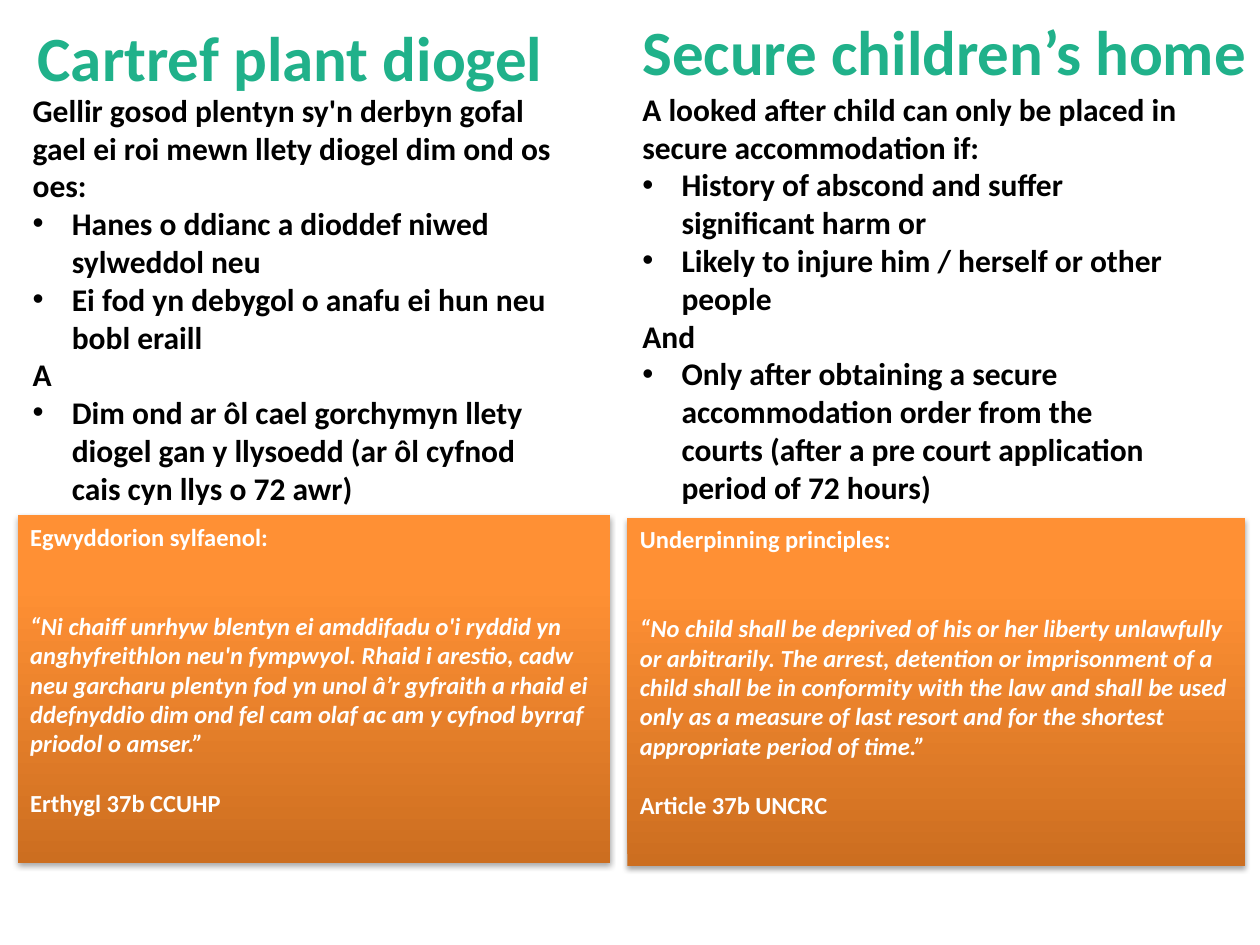
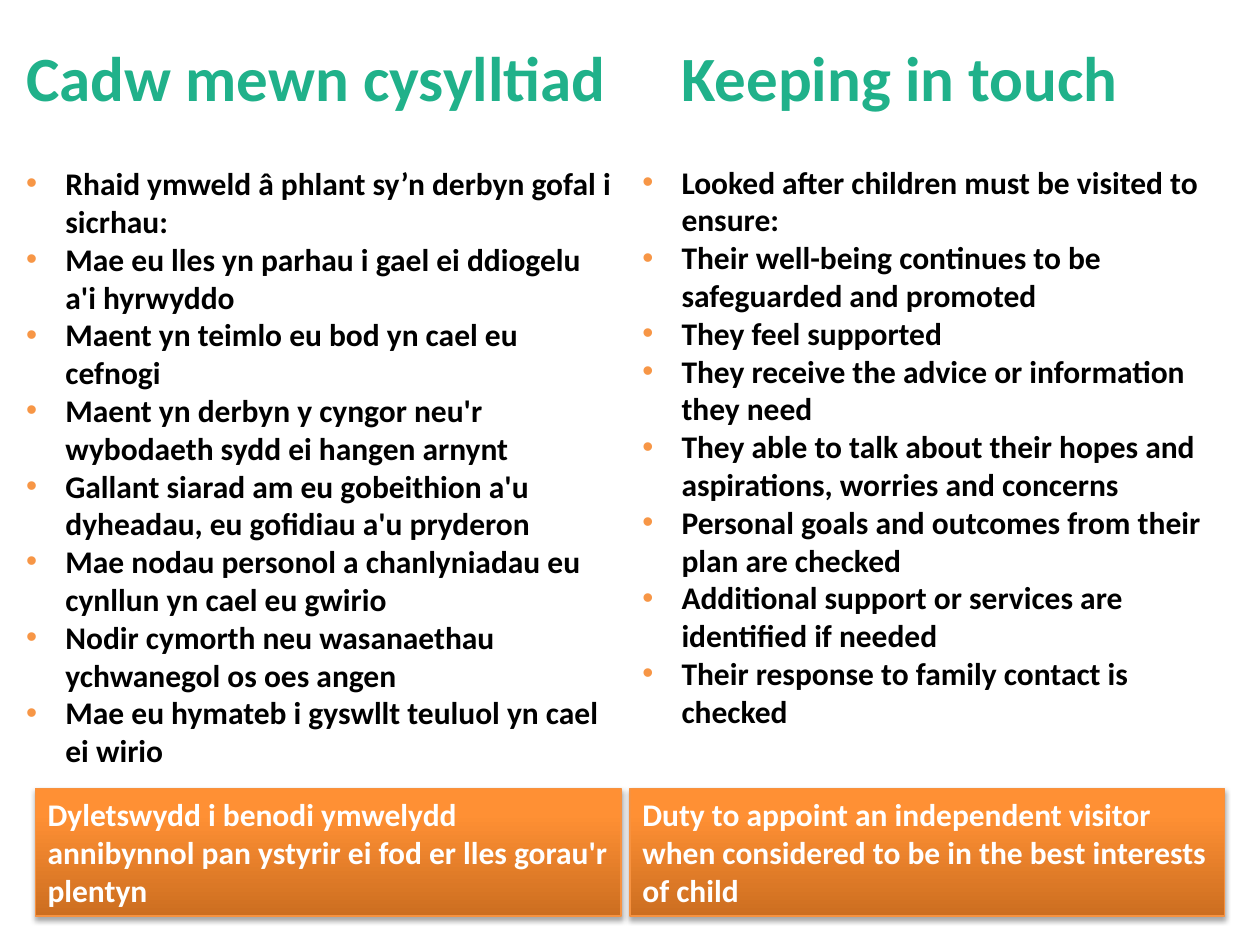
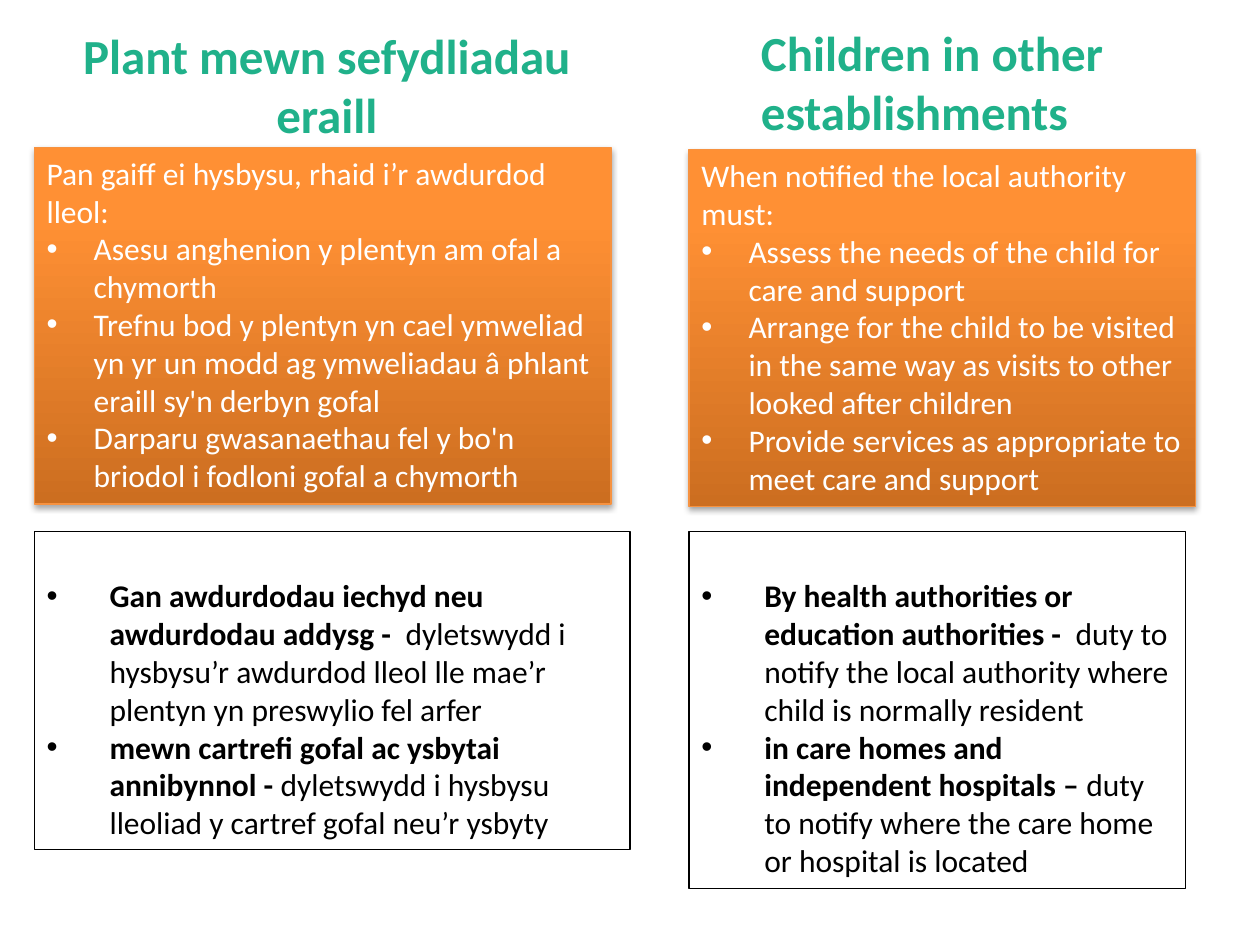
from pptx import Presentation
from pptx.dml.color import RGBColor
from pptx.enum.shapes import MSO_SHAPE as SHAPE
from pptx.enum.text import MSO_ANCHOR as ANCHOR, PP_ALIGN as ALIGN
from pptx.oxml import parse_xml
from pptx.oxml.ns import nsdecls
from pptx.util import Cm, Pt

rgb = RGBColor.from_string
FONT = "Calibri"
GREEN, BLACK, WHITE = "20B18A", "000000", "FFFFFF"
DOT, EDGE = "F79646", "F69240"
NS = nsdecls("a")
STOPS = "".join(f'<a:gs pos="{pos}"><a:srgbClr val="{tint}"/></a:gs>' for pos, tint in
                ((0, "CC6E20"), (80000, "FF9034"), (100000, "FF9136")))
GRAD = (f'<a:gradFill {NS} rotWithShape="1"><a:gsLst>{STOPS}</a:gsLst>'
        '<a:lin ang="16200000" scaled="0"/></a:gradFill>')
SHADOW = (f'<a:outerShdw {NS} blurRad="40000" dist="23000" dir="5400000" rotWithShape="0">'
          '<a:srgbClr val="000000"><a:alpha val="35000"/></a:srgbClr></a:outerShdw>')


def write(shape, lines, size=18, color=BLACK, bold=True, hang=0.79, dot=None,
          align=ALIGN.LEFT, top=0.13):
    """Fill a shape with lines; "• " starts a bullet, a pair is a bold lead and plain rest."""
    frame = shape.text_frame
    frame.word_wrap = True
    frame.vertical_anchor = ANCHOR.TOP
    frame.margin_top = Cm(top)
    for i, line in enumerate(lines):
        para = frame.paragraphs[0] if i == 0 else frame.add_paragraph()
        para.alignment = align
        parts = [(line, bold)] if isinstance(line, str) else zip(line, (True, False))
        for part, heavy in parts:
            if part.startswith("• "):
                part = part[2:]
                props = para._p.get_or_add_pPr()
                props.set("marL", str(Cm(hang)))
                props.set("indent", str(-Cm(hang)))
                if dot:
                    props.append(parse_xml(
                        f'<a:buClr {NS}><a:srgbClr val="{dot}"/></a:buClr>'))
                props.append(parse_xml(f'<a:buFont {NS} typeface="Arial"/>'))
                props.append(parse_xml(f'<a:buChar {NS} char="•"/>'))
            run = para.add_run()
            run.text = part
            font = run.font
            font.name, font.size, font.bold = FONT, Pt(size), heavy
            font.color.rgb = rgb(color)
    return frame.paragraphs


def panel(slide, at, edge=None, glow=True):
    """Add a rectangle, either shaded orange with a shadow or hollow."""
    box = slide.shapes.add_shape(SHAPE.RECTANGLE, *map(Cm, at))
    box.shadow.inherit = False
    props = box._element.spPr
    if glow:
        props.insert(2, parse_xml(GRAD))
        props[-1].append(parse_xml(SHADOW))
    else:
        box.fill.background()
    if edge:
        box.line.color.rgb = rgb(edge)
        box.line.width = Pt(0.75)
    else:
        box.line.fill.background()
    return box


deck = Presentation()
deck.slide_width, deck.slide_height = Cm(25.4), Cm(19.05)
blank = deck.slide_layouts[6]

# Secure homes
slide = deck.slides.add_slide(blank)
homes = [
    ((0.51, 0.25, 16.03, 1.78), "Cartref plant diogel",
     (0.41, 1.7, 11.3, 8.64), [
         "Gellir gosod plentyn sy'n derbyn gofal gael ei roi mewn llety diogel dim ond os oes:",
         "• Hanes o ddianc a dioddef niwed sylweddol neu",
         "• Ei fod yn debygol o anafu ei hun neu bobl eraill",
         "A",
         "• Dim ond ar ôl cael gorchymyn llety diogel gan y llysoedd "
         "(ar ôl cyfnod cais cyn llys o 72 awr)"],
     (0.36, 10.39, 11.94, 7.01), [
         "Egwyddorion sylfaenol:",
         "“Ni chaiff unrhyw blentyn ei amddifadu o'i ryddid yn anghyfreithlon neu'n fympwyol. "
         "Rhaid i arestio, cadw neu garcharu plentyn fod yn unol â’r gyfraith a rhaid ei "
         "ddefnyddio dim ond fel cam olaf ac am y cyfnod byrraf priodol o amser.”",
         "Erthygl 37b CCUHP"]),
    ((12.7, 0.13, 14.4, 1.8), "Secure children’s home",
     (12.7, 1.68, 11.3, 8.71), [
         "A looked after child can only be placed in secure accommodation if:",
         "• History of abscond and suffer significant harm or",
         "• Likely to injure him / herself or other people",
         "And",
         "• Only after obtaining a secure accommodation order from the courts "
         "(after a pre court application period of 72 hours)"],
     (12.65, 10.44, 12.45, 7.01), [
         "Underpinning principles:",
         "“No child shall be deprived of his or her liberty unlawfully or arbitrarily. "
         "The arrest, detention or imprisonment of a child shall be in conformity with the law "
         "and shall be used only as a measure of last resort and for the shortest appropriate "
         "period of time.”",
         "Article 37b UNCRC"]),
]
for head, title, body, rules, base, law in homes:
    write(slide.shapes.add_textbox(*map(Cm, head)), [title], size=36, color=GREEN)
    write(slide.shapes.add_textbox(*map(Cm, body)), rules)
    name, quote, source = write(panel(slide, base), law, size=14, color=WHITE)
    quote.runs[0].font.italic = True
    quote.space_before, source.space_before = Pt(34), Pt(17)

# Keeping in touch
slide = deck.slides.add_slide(blank)
visits = [
    ((0.28, 0.64, 13.82, 1.78), "Cadw mewn cysylltiad",
     (0.28, 3.18, 12.42, 14.2), [
         "• Rhaid ymweld â phlant sy’n derbyn gofal i sicrhau:",
         "• Mae eu lles yn parhau i gael ei ddiogelu a'i hyrwyddo",
         "• Maent yn teimlo eu bod yn cael eu cefnogi",
         "• Maent yn derbyn y cyngor neu'r wybodaeth sydd ei hangen arnynt",
         "• Gallant siarad am eu gobeithion a'u dyheadau, eu gofidiau a'u pryderon",
         "• Mae nodau personol a chanlyniadau eu cynllun yn cael eu gwirio",
         "• Nodir cymorth neu wasanaethau ychwanegol os oes angen",
         "• Mae eu hymateb i gyswllt teuluol yn cael ei wirio"],
     (0.71, 15.9, 11.81, 2.57),
     "Dyletswydd i benodi ymwelydd annibynnol pan ystyrir ei fod er lles gorau'r plentyn"),
    ((13.49, 0.64, 13.79, 1.8), "Keeping in touch",
     (12.7, 3.15, 12.19, 14.35), [
         "• Looked after children must be visited to ensure:",
         "• Their well-being continues to be safeguarded and promoted",
         "• They feel supported",
         "• They receive the advice or information they need",
         "• They able to talk about their hopes and aspirations, worries and concerns",
         "• Personal goals and outcomes from their plan are checked",
         "• Additional support or services are identified if needed",
         "• Their response to family contact is checked"],
     (12.7, 15.9, 11.99, 2.57),
     "Duty to appoint an independent visitor when considered to be in the best interests "
     "of child"),
]
for head, title, body, aims, base, duty in visits:
    write(slide.shapes.add_textbox(*map(Cm, head)), [title], size=36, color=GREEN)
    write(slide.shapes.add_textbox(*map(Cm, body)), aims, dot=DOT)
    write(panel(slide, base, edge=EDGE), [duty], color=WHITE)

# Other establishments
slide = deck.slides.add_slide(blank)
places = [
    ((0.89, 0.38, 11.4, 2.64), "Plant mewn sefydliadau eraill", ALIGN.CENTER,
     (0.69, 2.97, 11.63, 7.19), [
         "Pan gaiff ei hysbysu, rhaid i’r awdurdod lleol:",
         "• Asesu anghenion y plentyn am ofal a chymorth",
         "• Trefnu bod y plentyn yn cael ymweliad yn yr un modd ag ymweliadau â phlant eraill "
         "sy'n derbyn gofal",
         "• Darparu gwasanaethau fel y bo'n briodol i fodloni gofal a chymorth"],
     (0.69, 10.72, 12.01, 6.4), [
         ("• Gan awdurdodau iechyd neu awdurdodau addysg - ",
          " dyletswydd i hysbysu’r awdurdod lleol lle mae’r plentyn yn preswylio fel arfer"),
         ("• mewn cartrefi gofal ac ysbytai annibynnol - ",
          "dyletswydd i hysbysu lleoliad y cartref gofal neu’r ysbyty")]),
    ((15.09, 0.33, 11.4, 2.64), "Children in other establishments", ALIGN.LEFT,
     (13.89, 3.02, 10.21, 7.19), [
         "When notified the local authority must:",
         "• Assess the needs of the child for care and support",
         "• Arrange for the child to be visited in the same way as visits to other looked "
         "after children",
         "• Provide services as appropriate to meet care and support"],
     (13.89, 10.72, 10.01, 7.19), [
         ("• By health authorities or education authorities - ",
          " duty to notify the local authority where child is normally resident"),
         ("• in care homes and independent hospitals – ",
          "duty to notify where the care home or hospital is located")]),
]
for head, title, align, body, tasks, base, duties in places:
    write(slide.shapes.add_textbox(*map(Cm, head)), [title], size=28, color=GREEN, align=align)
    write(panel(slide, body, edge=EDGE), tasks, color=WHITE, bold=False, hang=0.95)
    write(panel(slide, base, edge=BLACK, glow=False), duties, hang=1.27, top=0.9)

deck.save("out.pptx")
